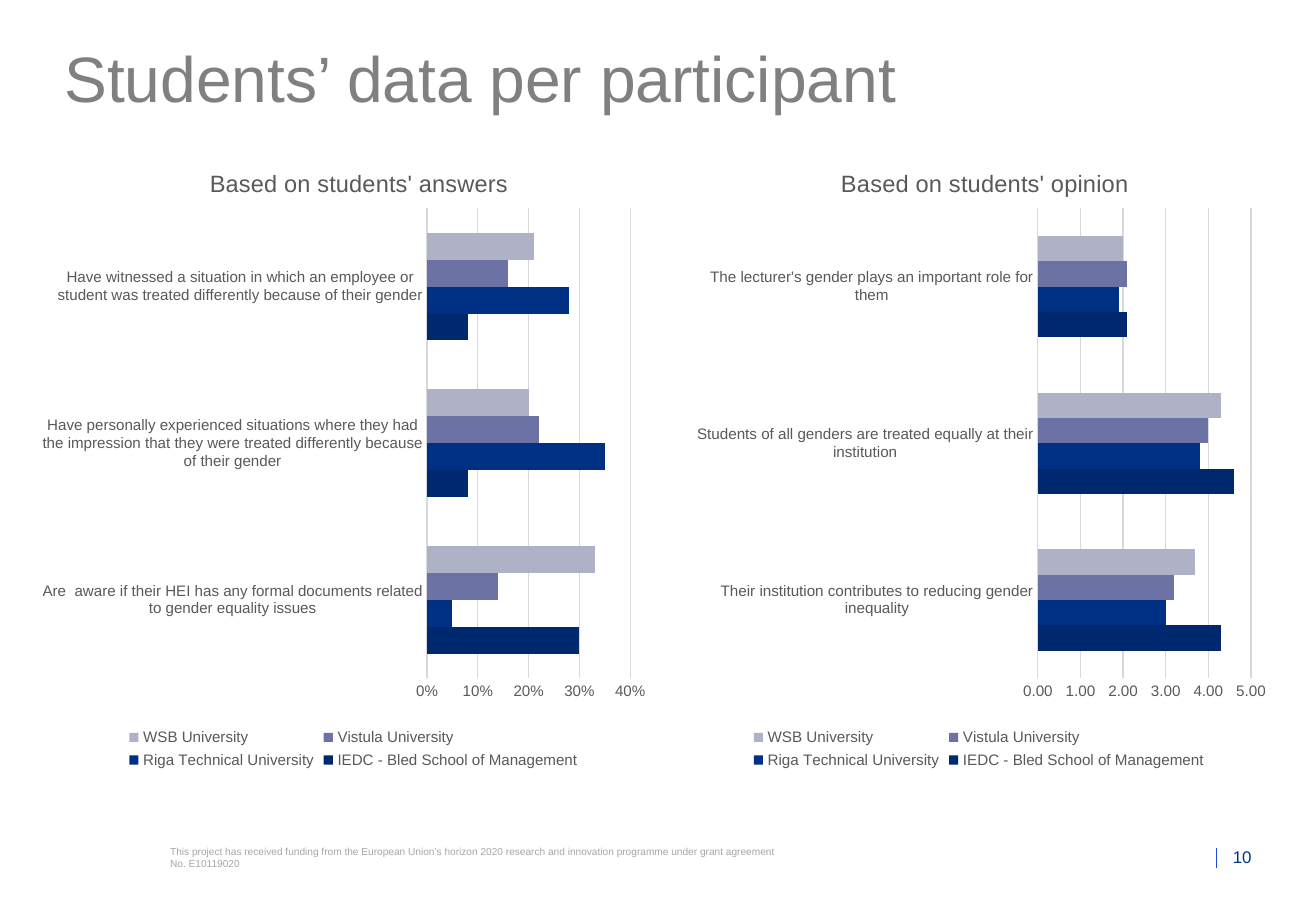
from dataclasses import dataclass

from pptx import Presentation
from pptx import util as u
from pptx.chart.data import CategoryChartData
from pptx.dml.color import RGBColor
from pptx.enum import chart as ch, shapes, text
from pptx.oxml import parse_xml
from pptx.oxml.ns import nsdecls, qn

W, H = 10.83, 7.5
COL, ROW = W / 100, H / 100
FONT = "Arial"
COLORS = {
    "title": "808080",
    "footer": "A6A6A6",
    "number": "00338D",
    "rule": "1E49E2",
    "label": "595959",
    "grid": "D9D9D9",
    "IEDC - Bled School of Management": "00286F",
    "Riga Technical University": "003084",
    "Vistula University": "6C73A4",
    "WSB University": "AFB1C7",
}
PARTICIPANTS = list(COLORS)[-4:]


@dataclass
class Box:
    col: float
    row: float
    cols: float
    rows: float

    def emu(self) -> list[int]:
        return [u.Inches(self.col * COL), u.Inches(self.row * ROW),
                u.Inches(self.cols * COL), u.Inches(self.rows * ROW)]


@dataclass
class Label:
    box: Box
    words: str
    size: float
    color: str
    align: text.PP_ALIGN = text.PP_ALIGN.LEFT
    anchor: text.MSO_ANCHOR = text.MSO_ANCHOR.TOP
    spacing: float = 1.0


@dataclass
class BarPanel:
    box: Box
    title: str
    title_at: tuple[float, float]
    plot_at: tuple[float, float, float, float]
    number_format: str
    maximum: float
    step: float
    gap: int
    categories: list[str]
    values: list[list[float]]


LABELS = [
    Label(Box(4.89, 6.53, 90.12, 10.53), "Students’ data per participant",
          38, "title", spacing=0.7),
    Label(Box(12.93, 92.8, 46.08, 4),
          "This project has received funding from the European Union’s horizon 2020 "
          "research and innovation programme under grant agreement No. E10119020",
          6, "footer"),
    Label(Box(92.61, 93.07, 2.49, 2.13), "10", 10, "number",
          text.PP_ALIGN.RIGHT, text.MSO_ANCHOR.BOTTOM),
]

PANELS = [
    BarPanel(
        Box(3.23, 15.2, 47, 69.73), "Based on students' answers",
        (0.26, 0.04), (0.62, 0.11, 0.33, 0.74), "0%", 0.4, 0.1, 182,
        ["Are  aware if their HEI has any formal documents related to gender equality issues",
         "Have personally experienced situations where they had the impression that "
         "they were treated differently because of their gender",
         "Have witnessed a situation in which an employee or student was treated "
         "differently because of their gender"],
        [[0.3, 0.08, 0.08], [0.05, 0.35, 0.28], [0.14, 0.22, 0.16], [0.33, 0.2, 0.21]]),
    BarPanel(
        Box(51.89, 15.2, 44.97, 69.73), "Based on students' opinion",
        (0.26, 0.04), (0.6, 0.11, 0.36, 0.74), "0.00", 5, 1, 219,
        ["Their institution contributes to reducing gender inequality",
         "Students of all genders are treated equally at their institution",
         "The lecturer's gender plays an important role for them"],
        [[4.3, 4.6, 2.1], [3, 3.8, 1.9], [3.2, 4, 2.1], [3.7, 4.3, 2]]),
]


def rgb(name: str) -> RGBColor:
    return RGBColor.from_string(COLORS[name])


def set_font(font, size: float, color: str) -> None:
    font.name, font.size, font.bold = FONT, u.Pt(size), False
    font.color.rgb = rgb(color)


def add_label(s, label: Label) -> None:
    tf = s.shapes.add_textbox(*label.box.emu()).text_frame
    tf.word_wrap = True
    tf.vertical_anchor = label.anchor
    tf.margin_left = tf.margin_right = tf.margin_top = tf.margin_bottom = 0
    p = tf.paragraphs[0]
    p.text, p.alignment, p.line_spacing = label.words, label.align, label.spacing
    set_font(p.font, label.size, label.color)


def add_rule(s, col: float, top: float, bottom: float) -> None:
    x = u.Inches(col * COL)
    rule = s.shapes.add_connector(shapes.MSO_CONNECTOR.STRAIGHT, x, u.Inches(top * ROW),
                                  x, u.Inches(bottom * ROW))
    rule.line.color.rgb, rule.line.width = rgb("rule"), u.Pt(0.5)
    rule._element.spPr.append(parse_xml(f"<a:effectLst {nsdecls('a')}/>"))


def set_layout(parent, index: int, shares: tuple[float, ...], inner: bool = False) -> None:
    for old in parent.findall(qn("c:layout")):
        parent.remove(old)
    target = '<c:layoutTarget val="inner"/>' if inner else ""
    modes = '<c:xMode val="edge"/><c:yMode val="edge"/>'
    sizes = "".join(f'<c:{k} val="{v}"/>' for k, v in zip("xywh", shares))
    parent.insert(index, parse_xml(
        f"<c:layout {nsdecls('c')}><c:manualLayout>{target}{modes}{sizes}"
        "</c:manualLayout></c:layout>"))


def style_line(line, color: str) -> None:
    line.color.rgb, line.width = rgb(color), u.Pt(0.75)


def add_panel(s, panel: BarPanel) -> None:
    data = CategoryChartData(number_format=panel.number_format)
    data.categories = panel.categories
    for name, values in zip(PARTICIPANTS, panel.values):
        data.add_series(name, values)
    chart = s.shapes.add_chart(ch.XL_CHART_TYPE.BAR_CLUSTERED, *panel.box.emu(), data).chart
    chart.font.name, chart.font.size = FONT, u.Pt(10)

    p = chart.chart_title.text_frame.paragraphs[0]
    p.text = panel.title
    set_font(p.font, 14, "label")
    chart.chart_title.include_in_layout = False
    set_layout(chart.element.xpath("c:chart/c:title")[0], 1, panel.title_at)
    set_layout(chart.element.xpath("c:chart/c:plotArea")[0], 0, panel.plot_at, inner=True)

    plot = chart.plots[0]
    plot.gap_width, plot.vary_by_categories = panel.gap, False
    for series in plot.series:
        series.format.fill.solid()
        series.format.fill.fore_color.rgb = rgb(series.name)

    for axis in (chart.category_axis, chart.value_axis):
        axis.major_tick_mark = axis.minor_tick_mark = ch.XL_TICK_MARK.NONE
        set_font(axis.tick_labels.font, 9, "label")
    style_line(chart.category_axis.format.line, "grid")
    axis = chart.value_axis
    axis.format.line.fill.background()
    style_line(axis.major_gridlines.format.line, "grid")
    axis.minimum_scale, axis.maximum_scale, axis.major_unit = 0, panel.maximum, panel.step
    axis.tick_labels.number_format = panel.number_format
    axis.tick_labels.number_format_is_linked = False

    chart.has_legend = True
    chart.legend.position = ch.XL_LEGEND_POSITION.BOTTOM
    chart.legend.include_in_layout = False
    set_font(chart.legend.font, 9, "label")


def main() -> None:
    prs = Presentation()
    prs.slide_width, prs.slide_height = u.Inches(W), u.Inches(H)
    s = prs.slides.add_slide(prs.slide_layouts[6])
    add_rule(s, 92.43, 93.07, 95.33)
    for label in LABELS:
        add_label(s, label)
    for panel in PANELS:
        add_panel(s, panel)
    prs.save("out.pptx")


if __name__ == "__main__":
    main()
